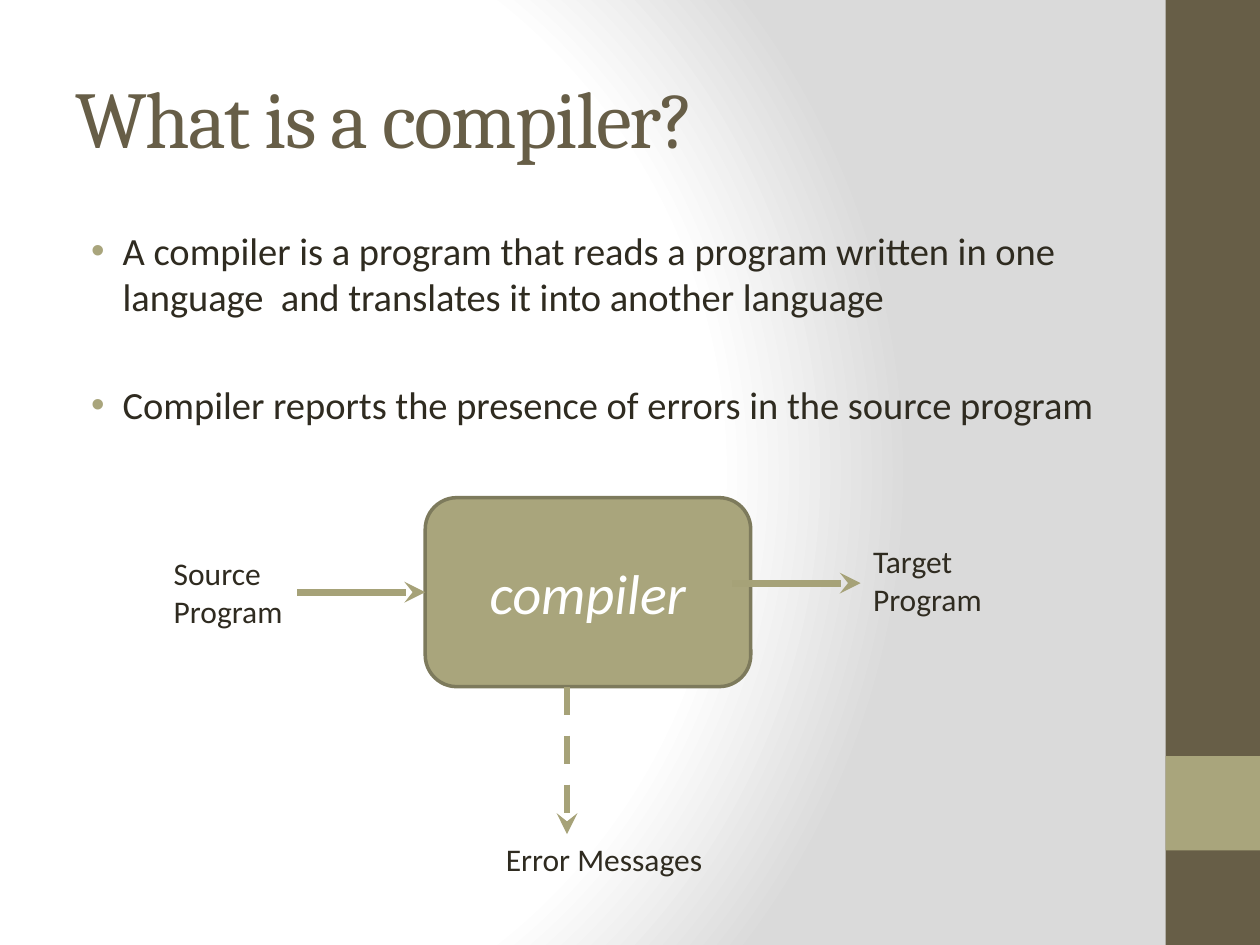
from lxml.etree import SubElement
from pptx import Presentation
from pptx.dml.color import RGBColor
from pptx.enum.dml import MSO_LINE_DASH_STYLE as DASH
from pptx.enum.shapes import MSO_CONNECTOR, MSO_SHAPE as SHAPE
from pptx.enum.text import MSO_ANCHOR, MSO_AUTO_SIZE as AUTO, PP_ALIGN
from pptx.oxml import parse_xml
from pptx.oxml.ns import qn
from pptx.util import Pt

BROWN = RGBColor(0x67, 0x5E, 0x47)
OLIVE = RGBColor(0xA9, 0xA5, 0x7C)
OUTLINE = RGBColor(0x7D, 0x7A, 0x5C)
ARROW = RGBColor(0xA6, 0xA2, 0x78)
INK = RGBColor(0x2F, 0x2B, 0x20)
WHITE = RGBColor(0xFF, 0xFF, 0xFF)

BACKDROP = """
<a:gradFill xmlns:a="http://schemas.openxmlformats.org/drawingml/2006/main" rotWithShape="1">
  <a:gsLst>
    <a:gs pos="0"><a:srgbClr val="FFFFFF"/></a:gs>
    <a:gs pos="75000"><a:srgbClr val="FFFFFF"/></a:gs>
    <a:gs pos="100000"><a:srgbClr val="DADADA"/></a:gs>
  </a:gsLst>
  <a:path path="circle"><a:fillToRect l="20000" t="50000" r="100000" b="50000"/></a:path>
</a:gradFill>"""


class SlideBuilder:
    """Holds the style and the current slide; all lengths are in points."""
    heading_font = "Cambria"
    body_font = "Calibri"

    def __init__(self, page):
        self.page = page

    def format_text(self, frame, size, color, font=None, italic=None):
        for para in frame.paragraphs:
            for span in para.runs:
                span.font.name = font or self.body_font
                span.font.size = Pt(size)
                span.font.italic = italic
                span.font.color.rgb = color

    def backdrop(self):
        self.page.background.fill.solid()
        solid = self.page.element.find(".//" + qn("p:bgPr")).find(qn("a:solidFill"))
        solid.getparent().replace(solid, parse_xml(BACKDROP))

    def title(self, text, left, top, width, height):
        box = self.page.shapes.title
        box.left, box.top, box.width, box.height = map(Pt, (left, top, width, height))
        frame = box.text_frame
        frame.text = text
        frame.vertical_anchor = MSO_ANCHOR.MIDDLE
        frame.paragraphs[0].alignment = PP_ALIGN.LEFT
        self.format_text(frame, 46, BROWN, self.heading_font)
        for span in frame.paragraphs[0].runs:
            span.font._element.set("spc", "-100")

    def bullets(self, items, left, top, width, height, gap):
        box = self.page.shapes.add_textbox(*map(Pt, (left, top, width, height)))
        frame = box.text_frame
        frame.word_wrap = True
        frame.text = "\n".join(items)
        self.format_text(frame, 22, INK)
        for index, para in enumerate(frame.paragraphs):
            para.space_before = Pt(gap if index else 4.4)
            props = para._p.get_or_add_pPr()
            props.set("marL", str(Pt(27)))
            props.set("indent", str(Pt(-18)))
            tint = SubElement(props, qn("a:buClr"))
            SubElement(tint, qn("a:srgbClr"), val=str(OLIVE))
            SubElement(props, qn("a:buFont"), typeface="Arial")
            SubElement(props, qn("a:buChar"), char="•")

    def block(self, kind, left, top, width, height, fill, line=None, text=None):
        shape = self.page.shapes.add_shape(kind, *map(Pt, (left, top, width, height)))
        shape.shadow.inherit = False
        shape.fill.solid()
        shape.fill.fore_color.rgb = fill
        if line is None:
            shape.line.fill.background()
        else:
            shape.line.color.rgb = line
            shape.line.width = Pt(2)
        if text:
            frame = shape.text_frame
            frame.text = text
            frame.vertical_anchor = MSO_ANCHOR.MIDDLE
            frame.paragraphs[0].alignment = PP_ALIGN.CENTER
            self.format_text(frame, 32, WHITE, italic=True)

    def label(self, text, left, top, width, height):
        box = self.page.shapes.add_textbox(*map(Pt, (left, top, width, height)))
        frame = box.text_frame
        frame.word_wrap = False
        frame.auto_size = AUTO.SHAPE_TO_FIT_TEXT
        frame.text = text
        self.format_text(frame, 18, INK)

    def arrow(self, x1, y1, x2, y2, dash=None):
        link = self.page.shapes.add_connector(
            MSO_CONNECTOR.STRAIGHT, *map(Pt, (x1, y1, x2, y2)))
        link.line.color.rgb = ARROW
        link.line.width = Pt(4)
        if dash:
            link.line.dash_style = dash
        SubElement(link.line._get_or_add_ln(), qn("a:tailEnd"), type="stealth")
        SubElement(link._element.spPr, qn("a:effectLst"))


def main():
    deck = Presentation()
    deck.slide_width, deck.slide_height = Pt(720), Pt(540)
    slide = SlideBuilder(deck.slides.add_slide(deck.slide_layouts[5]))

    # Background and side band
    slide.backdrop()
    slide.block(SHAPE.RECTANGLE, 666, 0, 54, 540, BROWN)
    slide.block(SHAPE.RECTANGLE, 666, 432, 54, 54, OLIVE)

    # Title and definition
    slide.title("What is a compiler?", 36, 21.6, 600, 90)
    slide.bullets([
        "A compiler is a program that reads a program written in one "
        "language  and translates it into another language",
        "Compiler reports the presence of errors in the source program",
    ], 36, 126, 600, 144, gap=35.6)

    # Compiler diagram: source in, target and errors out
    slide.block(SHAPE.ROUNDED_RECTANGLE, 243, 284.4, 186, 108, OLIVE, OUTLINE, "compiler")
    slide.label("Source\nProgram", 92.2, 313.2, 77, 51)
    slide.label("Target\nProgram", 491.8, 306, 77, 51)
    slide.label("Error Messages", 282, 476.6, 128, 29)
    slide.arrow(170, 338.4, 243, 338.4)
    slide.arrow(418.5, 333.2, 491.8, 333.2)
    slide.arrow(324, 392.4, 324, 476.6, DASH.DASH)

    deck.save("out.pptx")


if __name__ == "__main__":
    main()
